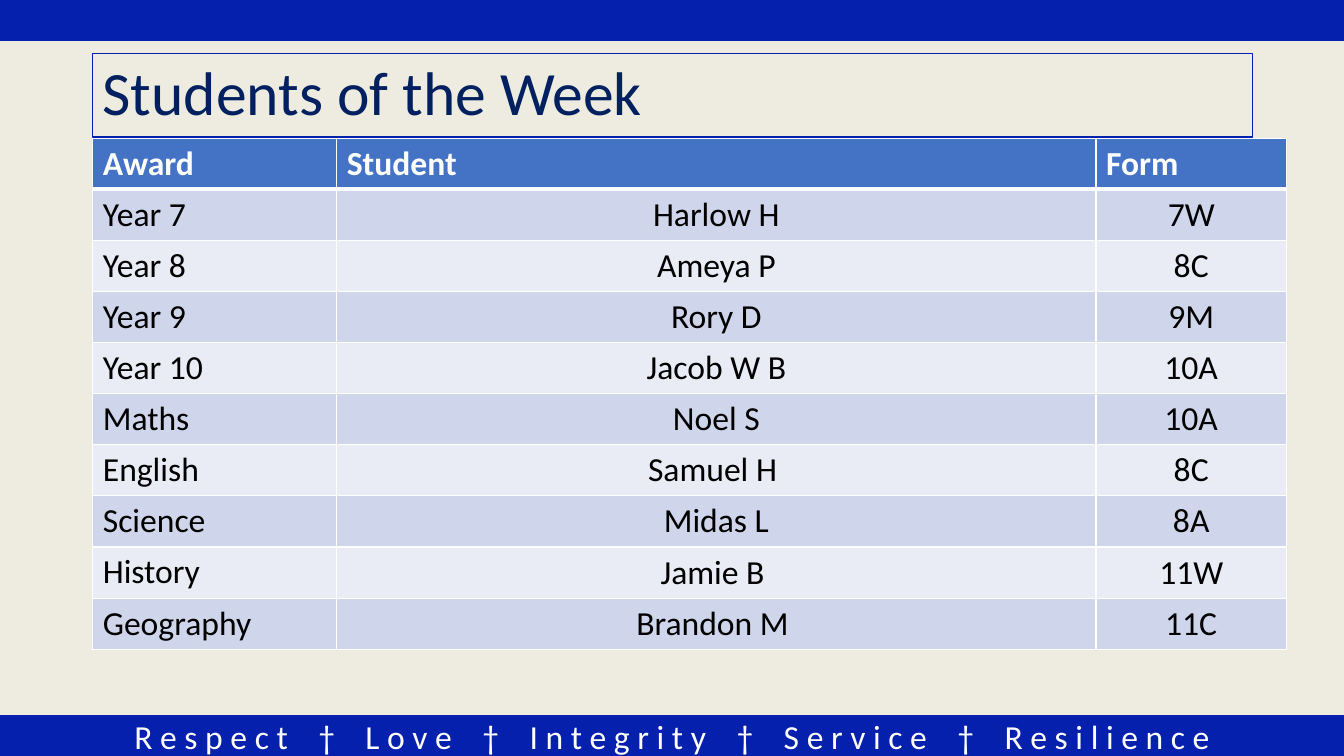
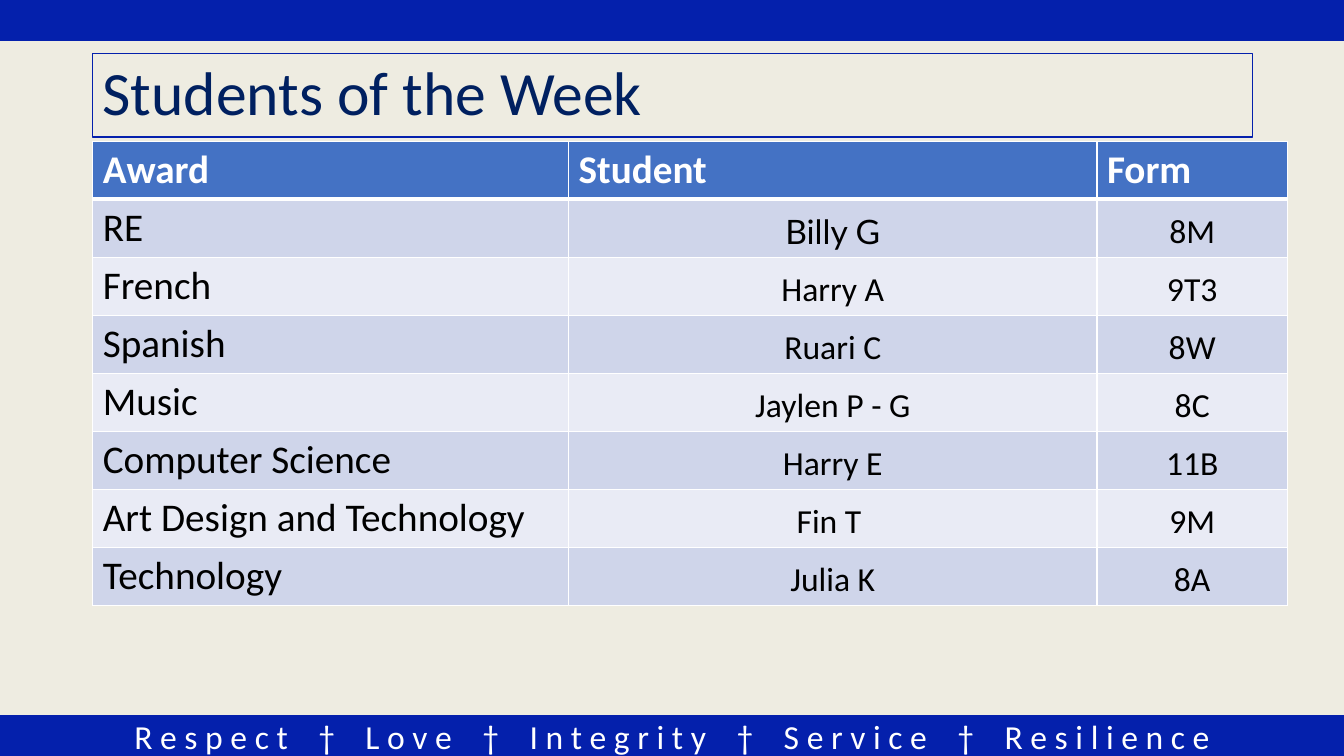
"""Build the two award slides for the students of the week."""
from lxml import etree
from pptx import Presentation
from pptx.dml.color import RGBColor
from pptx.enum.shapes import MSO_SHAPE
from pptx.enum.text import MSO_ANCHOR, PP_ALIGN
from pptx.oxml.ns import qn
from pptx.util import Inches, Pt

RECT = MSO_SHAPE.RECTANGLE
MIDDLE, BOTTOM = MSO_ANCHOR.MIDDLE, MSO_ANCHOR.BOTTOM
CENTER = PP_ALIGN.CENTER

COLORS = {
    "page": "EEECE1", "band": "0420AC", "title": "002060", "head": "4472C4",
    "odd": "CFD5EA", "even": "E9EBF5", "white": "FFFFFF", "text": "000000",
}
FONT = "Calibri"
TITLE = "Students of the Week"
VALUES = ["Respect", "Love", "Integrity", "Service", "Resilience"]
HEAD = ("Award", "Student", "Form")
WIDE, HIGH, BAND = 13.33, 7.5, 0.4
LEFT = 0.92
GAP = 1630

SLIDES = [
    {
        "top": 1.37, "cols": (2.42, 7.53, 1.89), "row": 0.5, "size": 24,
        "fonts": {},
        "rows": [
            ("Year 7", "Harlow H", "7W"),
            ("Year 8", "Ameya P", "8C"),
            ("Year 9", "Rory D", "9M"),
            ("Year 10", "Jacob W B", "10A"),
            ("Maths", "Noel S", "10A"),
            ("English", "Samuel H ", "8C"),
            ("Science", "Midas L", "8A"),
            ("History", "Jamie B ", "11W"),
            ("Geography", "Brandon M ", "11C"),
        ],
    },
    {
        "top": 1.4, "cols": (4.72, 5.24, 1.89), "row": 0.57, "size": 28,
        "fonts": {"Billy G": "Lato"},
        "rows": [
            ("RE", "Billy G", "8M"),
            ("French", "Harry A", "9T3"),
            ("Spanish", "Ruari C", "8W"),
            ("Music", "Jaylen P - G", "8C"),
            ("Computer Science", "Harry E", "11B"),
            ("Art Design and Technology", "Fin T ", "9M"),
            ("Technology", "Julia K", "8A"),
        ],
    },
]


def color(name):
    return RGBColor.from_string(COLORS[name])


def style(run, size, tint, bold=False, font=FONT):
    run.font.name, run.font.size, run.font.bold = font, Pt(size), bold
    run.font.color.rgb = color(tint)


def add_box(slide, place, weight, fill=None):
    box = slide.shapes.add_shape(RECT, *map(Inches, place))
    box.shadow.inherit = False
    if fill:
        box.fill.solid()
        box.fill.fore_color.rgb = color(fill)
    else:
        box.fill.background()
    box.line.color.rgb = color("band")
    box.line.width = Pt(weight)
    frame = box.text_frame
    frame.word_wrap = True
    frame.vertical_anchor = MIDDLE
    frame.paragraphs[0].alignment = CENTER
    return frame


def add_motto(para):
    for i, word in enumerate(VALUES):
        parts = [" ", "†", " "] if i else []
        for part in parts + [" ".join(word)]:
            run = para.add_run()
            run.text = part
            style(run, 24, "white")
            if part == " ":
                run.font._element.set("spc", str(GAP))


def add_frame(slide):
    foot = add_box(slide, (0, HIGH - BAND, WIDE, BAND), 1, "band")
    add_motto(foot.paragraphs[0])
    add_box(slide, (0, 0, WIDE, BAND), 1, "band")
    title = add_box(slide, (LEFT, 0.53, 11.5, 0.83), 0.75)
    title.text = TITLE
    para = title.paragraphs[0]
    para.line_spacing = 0.9
    style(para.runs[0], 44, "title")


def set_edges(cell, row):
    props = cell._tc.get_or_add_tcPr()
    thick = {0: "lnB", 1: "lnT"}.get(row)
    for side in ("lnL", "lnR", "lnT", "lnB"):
        width = Pt(3 if side == thick else 1)
        line = etree.SubElement(props, qn("a:" + side), w=str(width))
        fill = etree.SubElement(line, qn("a:solidFill"))
        etree.SubElement(fill, qn("a:srgbClr"), val=COLORS["white"])


def fill_cell(cell, text, row, col, data):
    set_edges(cell, row)
    cell.fill.solid()
    shade = ("odd" if row % 2 else "even") if row else "head"
    cell.fill.fore_color.rgb = color(shade)
    cell.text = text
    para = cell.text_frame.paragraphs[0]
    size = data["size"]
    if row and col:
        size = 24
        para.alignment = CENTER
        cell.vertical_anchor = BOTTOM
        cell.margin_left = cell.margin_right = cell.margin_top = Inches(0.01)
        cell.margin_bottom = Inches(0.05)
    style(para.runs[0], size, "text" if row else "white", not row,
          data["fonts"].get(text, FONT))


def add_awards(slide, data):
    rows = [HEAD] + data["rows"]
    place = (LEFT, data["top"], sum(data["cols"]), data["row"] * len(rows))
    table = slide.shapes.add_table(
        len(rows), len(HEAD), *map(Inches, place)).table
    table.horz_banding = False
    for col, width in zip(table.columns, data["cols"]):
        col.width = Inches(width)
    for r, row in enumerate(rows):
        table.rows[r].height = Inches(data["row"])
        for c, text in enumerate(row):
            fill_cell(table.cell(r, c), text, r, c, data)


def main():
    deck = Presentation()
    deck.slide_width, deck.slide_height = Inches(WIDE), Inches(HIGH)
    back = deck.slide_master.background.fill
    back.solid()
    back.fore_color.rgb = color("page")
    for data in SLIDES:
        slide = deck.slides.add_slide(deck.slide_layouts[6])
        add_frame(slide)
        add_awards(slide, data)
    deck.save("out.pptx")


if __name__ == "__main__":
    main()
